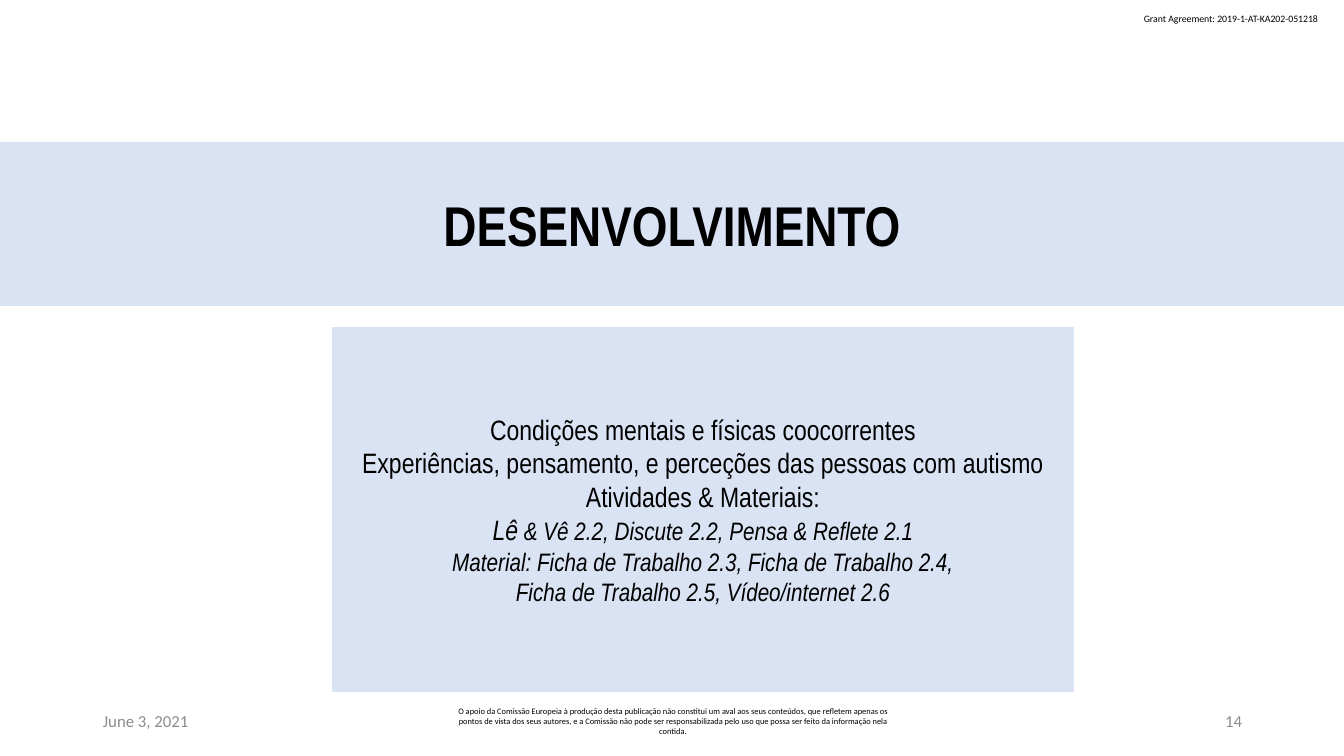
from pptx import Presentation
from pptx.dml.color import RGBColor
from pptx.enum.shapes import MSO_SHAPE
from pptx.enum.text import MSO_ANCHOR, PP_ALIGN
from pptx.util import Pt

PX = 12192000 / 1344
LEFT, CENTER, RIGHT = PP_ALIGN.LEFT, PP_ALIGN.CENTER, PP_ALIGN.RIGHT
TOP, MIDDLE = MSO_ANCHOR.TOP, MSO_ANCHOR.MIDDLE
RECTANGLE = MSO_SHAPE.RECTANGLE
BLACK = RGBColor(0x00, 0x00, 0x00)
GRAY = RGBColor(0x8C, 0x8C, 0x8C)
PALE_BLUE = RGBColor(0xDA, 0xE3, 0xF3)


def px(*lengths):
    return [round(length * PX) for length in lengths]


def style(run, font, size, color, bold=False, italic=False):
    run.font.name = font
    run.font.size = Pt(size)
    run.font.color.rgb = color
    run.font.bold = bold
    run.font.italic = italic


prs = Presentation()
prs.slide_width, prs.slide_height = px(1344, 756)
slide = prs.slides.add_slide(prs.slide_layouts[6])

disclaimer = (
    "O apoio da Comissão Europeia à produção desta publicação não constitui um aval "
    "aos seus conteúdos, que refletem apenas os pontos de vista dos seus autores, e a "
    "Comissão não pode ser responsabilizada pelo uso que possa ser feito da informação "
    "nela contida."
)
margin_notes = [
    ((1134, 8, 199, 22), "Grant Agreement: 2019-1-AT-KA202-051218", 7, BLACK, LEFT, TOP),
    ((93, 701, 302, 40), "June 3, 2021", 12, GRAY, LEFT, MIDDLE),
    ((446, 701, 454, 40), disclaimer, 6, BLACK, CENTER, MIDDLE),
    ((950, 701, 302, 40), "14", 12, GRAY, RIGHT, MIDDLE),
]
for bounds, text, size, color, align, anchor in margin_notes:
    frame = slide.shapes.add_textbox(*px(*bounds)).text_frame
    frame.word_wrap = True
    frame.vertical_anchor = anchor
    frame.text = text
    frame.paragraphs[0].alignment = align
    style(frame.paragraphs[0].runs[0], "Calibri", size, color)

heading = [[("DESENVOLVIMENTO", 40, True, False)]]
topics = [
    [("Condições mentais e físicas coocorrentes", 20, False, False)],
    [("Experiências, pensamento, e perceções das pessoas com autismo", 20, False, False)],
    [("Atividades & Materiais:", 20, False, False)],
    [("Lê", 20, False, True),
     (" & Vê 2.2, Discute 2.2, Pensa & Reflete 2.1", 18, False, True)],
    [("Material: Ficha de Trabalho 2.3, Ficha de Trabalho 2.4,", 18, False, True)],
    [("Ficha de Trabalho 2.5, Vídeo/internet 2.6", 18, False, True)],
]
for bounds, lines in [((0, 142, 1344, 164), heading), ((332, 327, 742, 365), topics)]:
    panel = slide.shapes.add_shape(RECTANGLE, *px(*bounds))
    panel.shadow.inherit = False
    panel.fill.solid()
    panel.fill.fore_color.rgb = PALE_BLUE
    panel.line.fill.background()
    frame = panel.text_frame
    frame.word_wrap = True
    frame.vertical_anchor = MIDDLE
    frame.margin_left, frame.margin_right = px(13, 13)
    frame.margin_top, frame.margin_bottom = px(7, 7)
    for index, line in enumerate(lines):
        paragraph = frame.add_paragraph() if index else frame.paragraphs[0]
        paragraph.alignment = CENTER
        for text, size, bold, italic in line:
            run = paragraph.add_run()
            run.text = text
            style(run, "Arial Narrow", size, BLACK, bold, italic)

prs.save("out.pptx")
